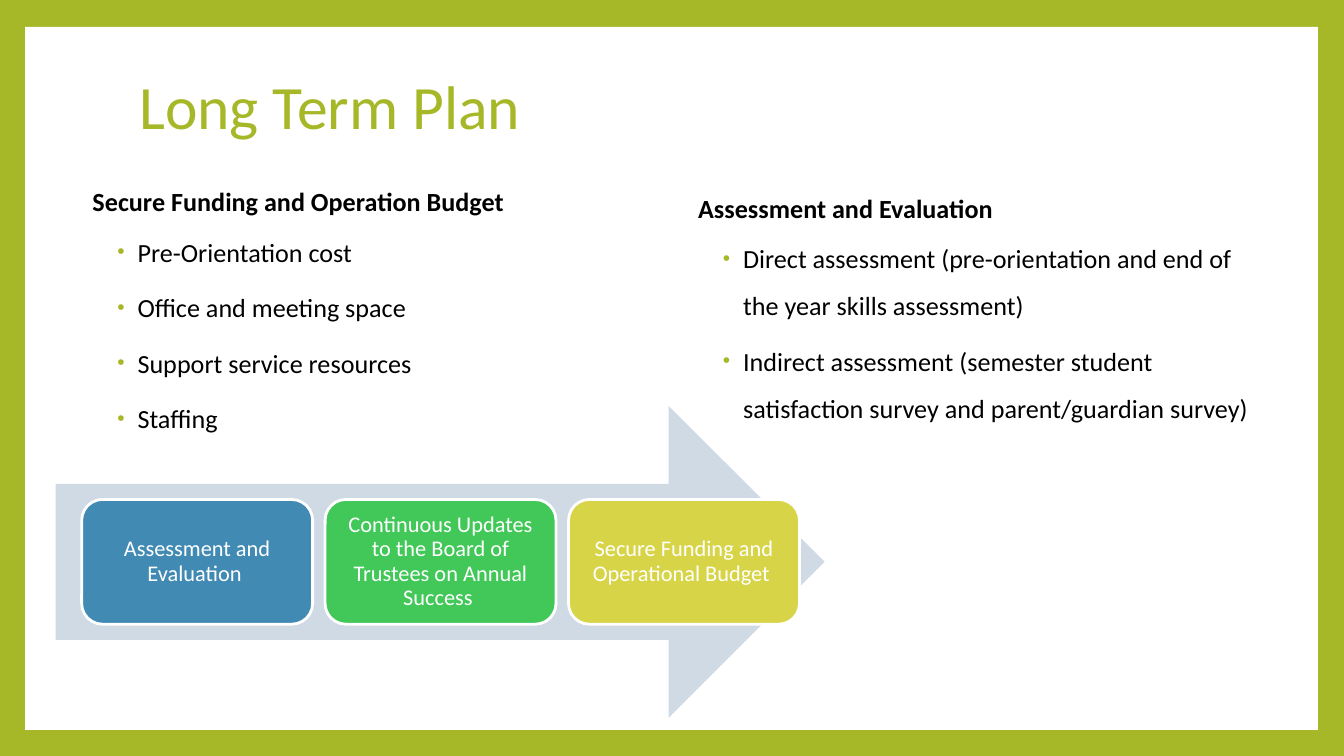
import pptx
import pptx.dml.color
import pptx.enum.shapes
import pptx.enum.text
import pptx.oxml
import pptx.oxml.ns
import pptx.util

Pt = pptx.util.Pt
SHAPES = pptx.enum.shapes.MSO_SHAPE
ALIGN = pptx.enum.text.PP_ALIGN
ANCHOR = pptx.enum.text.MSO_ANCHOR

GREEN = "A6B727"
WHITE = "FFFFFF"
BLACK = "000000"
BULLET_FORMAT = {"line_spacing": 1.5, "space_before": Pt(1.5), "space_after": Pt(3)}
STEPS = [
    ("Assessment and Evaluation ", "418AB3"),
    ("Continuous Updates to the Board of Trustees on Annual Success ", "41C858"),
    ("Secure Funding and Operational Budget ", "D7D447"),
]


def color(value):
    return pptx.dml.color.RGBColor.from_string(value)


def set_fill(fill, value):
    fill.solid()
    fill.fore_color.rgb = color(value)


def set_attributes(target, values):
    for name, value in values.items():
        setattr(target, name, value)


def add_shape(slide, kind, box, fill, outline=None):
    shape = slide.shapes.add_shape(kind, *map(Pt, box))
    shape.shadow.inherit = False
    set_fill(shape.fill, fill)
    if outline:
        set_fill(shape.line.fill, outline)
        shape.line.width = Pt(1.5)
    else:
        shape.line.fill.background()
    return shape


def add_text_box(slide, box, anchor=ANCHOR.TOP):
    frame = slide.shapes.add_textbox(*map(Pt, box)).text_frame
    set_attributes(frame, {"word_wrap": True, "vertical_anchor": anchor})
    return frame


def write(paragraph, text, size, text_color, bold=False, **paragraph_format):
    set_attributes(paragraph, paragraph_format)
    run = paragraph.add_run()
    run.text = text
    set_attributes(run.font, {"name": "Calibri", "size": Pt(size), "bold": bold})
    run.font.color.rgb = color(text_color)


def set_indent(paragraph, margin, indent=0):
    properties = paragraph._p.get_or_add_pPr()
    properties.set("marL", str(Pt(margin)))
    properties.set("indent", str(Pt(indent)))
    return properties


def add_bullet(paragraph):
    properties = set_indent(paragraph, 27, -10.8)
    namespace = pptx.oxml.ns.nsdecls("a")
    for xml in (
        f'<a:buClr {namespace}><a:srgbClr val="{GREEN}"/></a:buClr>',
        f'<a:buSzPct {namespace} val="80000"/>',
        f'<a:buFont {namespace} typeface="Arial"/>',
        f'<a:buChar {namespace} char="•"/>',
    ):
        properties.append(pptx.oxml.parse_xml(xml))


def add_topic(slide, box, heading, heading_spacing, items):
    frame = add_text_box(slide, box)
    paragraph = frame.paragraphs[0]
    write(paragraph, heading, 14, BLACK, True,
          line_spacing=heading_spacing, space_before=Pt(10.5))
    set_indent(paragraph, 2.9)
    for item in items:
        paragraph = frame.add_paragraph()
        write(paragraph, item, 14, BLACK, **BULLET_FORMAT)
        paragraph.level = 1
        add_bullet(paragraph)


def add_process(slide):
    add_shape(slide, SHAPES.RIGHT_ARROW, (29.8, 217.5, 412, 167), "CFDAE5")
    for index, (text, fill) in enumerate(STEPS):
        box = (43.8 + index * 130.4, 267.6, 123.7, 66.8)
        shape = add_shape(slide, SHAPES.ROUNDED_RECTANGLE, box, fill, WHITE)
        margins = dict.fromkeys(
            ("margin_left", "margin_top", "margin_right", "margin_bottom"), Pt(3.6))
        set_attributes(shape.text_frame, {
            **margins, "word_wrap": True, "vertical_anchor": ANCHOR.MIDDLE})
        write(shape.text_frame.paragraphs[0], text, 12, WHITE,
              alignment=ALIGN.CENTER, line_spacing=0.9)


def main():
    presentation = pptx.Presentation()
    presentation.slide_width, presentation.slide_height = Pt(720), Pt(405)
    slide = presentation.slides.add_slide(presentation.slide_layouts[6])
    set_fill(slide.background.fill, GREEN)
    add_shape(slide, SHAPES.RECTANGLE, (13.5, 14.4, 692.6, 376.6), WHITE)
    title = add_text_box(slide, (67.5, 18.7, 583, 80), ANCHOR.MIDDLE)
    write(title.paragraphs[0], "Long Term Plan", 33, GREEN, line_spacing=0.9)
    add_topic(slide, (364, 91.4, 320.4, 237.6), "Assessment and Evaluation", 1.5, [
        "Direct assessment (pre-orientation and end of the year skills assessment)",
        "Indirect assessment (semester student satisfaction survey and parent/guardian survey)",
    ])
    add_topic(slide, (39.6, 97.9, 280.8, 237.6), "Secure Funding and Operation Budget", 0.9, [
        "Pre-Orientation cost",
        "Office and meeting space",
        "Support service resources",
        "Staffing",
    ])
    add_process(slide)
    presentation.save("out.pptx")


if __name__ == "__main__":
    main()
